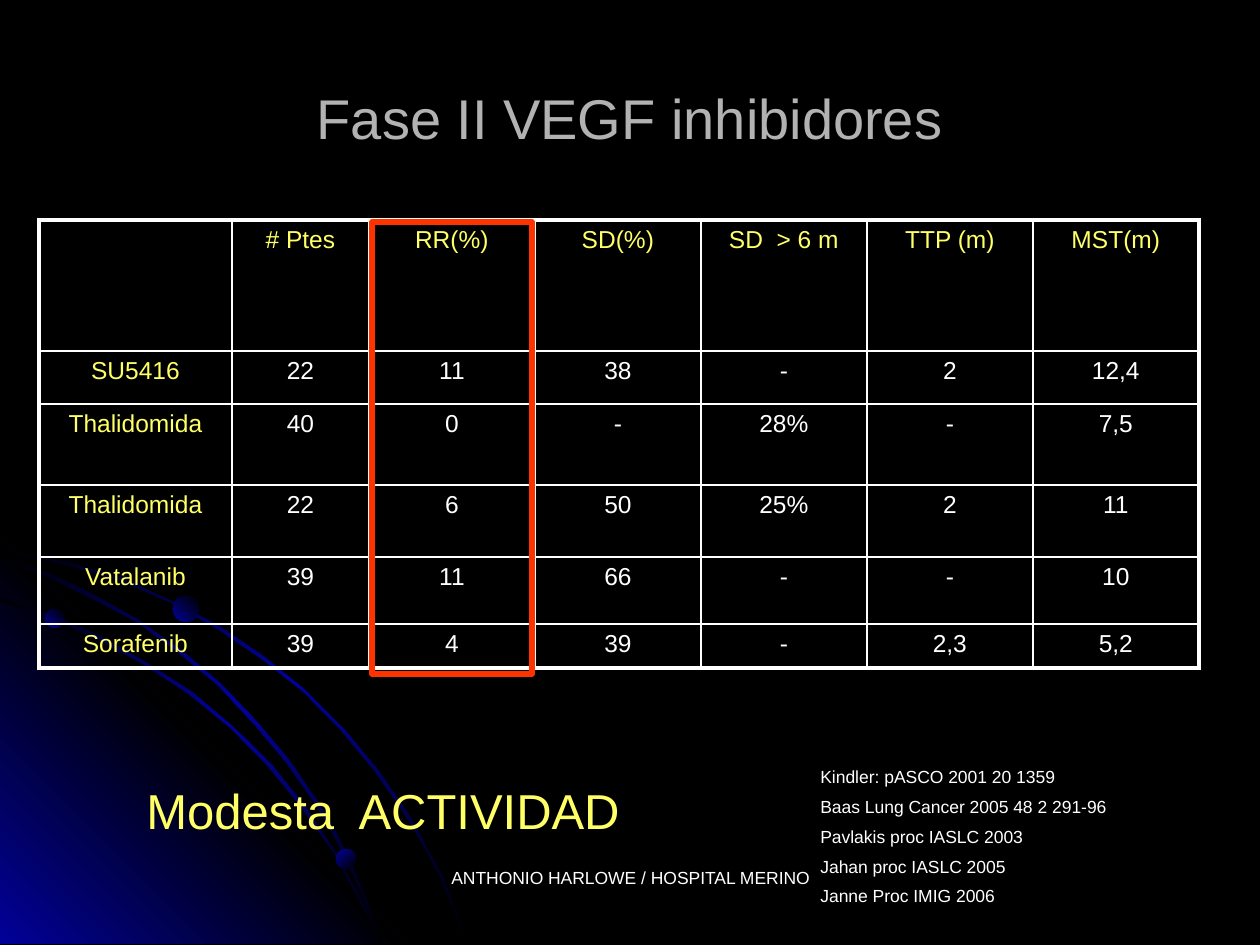
from lxml.etree import SubElement
from pptx import Presentation
from pptx.dml.color import RGBColor
from pptx.enum.shapes import MSO_SHAPE
from pptx.enum.text import MSO_ANCHOR, PP_ALIGN
from pptx.oxml.ns import qn
from pptx.util import Pt

SCALE = 914400 / 126
COLORS = {
    "black": "000000",
    "blue": "010199",
    "grey": "B2B2B2",
    "yellow": "FFFF66",
    "white": "FFFFFF",
    "red": "FF3300",
}
FONT = "Arial"
GLOW = ["blue", "black", "blue"]
STREAK = ["black", "blue", "black"]
CORNER = [(406, 944), (0, 944), (0, 538)]
OUTER_ARC = [
    (72, 563), (35, 556), (0, 548), (0, 552), (35, 558), (71, 566),
    (122, 581), (170, 602), (218, 629), (262, 659), (304, 692), (341, 730),
    (375, 771), (407, 818), (425, 848), (441, 879), (454, 911), (466, 944),
    (469, 944), (456, 911), (444, 879), (427, 848), (410, 816), (378, 770),
    (343, 728), (305, 690), (263, 656), (219, 626), (171, 601), (123, 578),
]
INNER_ARC = [
    (359, 900), (370, 922), (379, 944), (382, 944), (373, 920), (360, 897),
    (335, 852), (305, 806), (271, 764), (232, 726), (192, 692), (147, 663),
    (100, 636), (52, 615), (0, 598), (0, 601), (49, 617), (97, 639),
    (145, 665), (189, 694), (231, 728), (268, 766), (302, 808), (334, 853),
]
MIDDLE_ARC = [
    (0, 557), (0, 559), (45, 576), (93, 599), (137, 622), (179, 653),
    (218, 685), (255, 725), (286, 762), (318, 808), (336, 840), (353, 874),
    (368, 910), (379, 944), (382, 944), (370, 907), (355, 873), (339, 838),
    (320, 805), (289, 760), (257, 722), (221, 684), (181, 650), (140, 621),
    (96, 596), (49, 573),
]
OUTLINES = [
    (OUTER_ARC, STREAK, 45),
    (CORNER, GLOW, 315),
    (INNER_ARC, STREAK, 45),
    (MIDDLE_ARC, STREAK, 45),
]
ORBS = [(45, 609, 19, 315), (336, 849, 20, 45), (173, 596, 26, 315)]
COLUMNS = [193, 137] + [166] * 5
ROWS = [131, 53, 81, 72, 67, 44]
RESULTS = [
    ["", "# Ptes", "RR(%)", "SD(%)", "SD  > 6 m", "TTP (m)", "MST(m)"],
    ["SU5416", "22", "11", "38", "-", "2", "12,4"],
    ["Thalidomida", "40", "0", "-", "28%", "-", "7,5"],
    ["Thalidomida", "22", "6", "50", "25%", "2", "11"],
    ["Vatalanib", "39", "11", "66", "-", "-", "10"],
    ["Sorafenib", "39", "4", "39", "-", "2,3", "5,2"],
]
REFERENCES = [
    "Kindler: pASCO 2001 20 1359",
    "Baas Lung Cancer 2005 48 2 291-96",
    "Pavlakis proc IASLC 2003",
    "Jahan proc IASLC 2005",
    "Janne Proc IMIG 2006",
]


def px(length):
    return round(length * SCALE)


def rgb(name):
    return RGBColor.from_string(COLORS[name])


def style_para(para, size, color, align):
    para.font.name = FONT
    para.font.size = Pt(size)
    para.font.color.rgb = rgb(color)
    para.alignment = align


def paint_gradient(shape, names, angle):
    shape.shadow.inherit = False
    shape.line.fill.background()
    shape.fill.gradient()
    gradient = shape.element.spPr.find(qn("a:gradFill"))
    for child in list(gradient):
        gradient.remove(child)
    stops = SubElement(gradient, qn("a:gsLst"))
    for index, name in enumerate(names):
        position = 100000 * index // (len(names) - 1)
        stop = SubElement(stops, qn("a:gs"), pos=str(position))
        SubElement(stop, qn("a:srgbClr"), val=COLORS[name])
    SubElement(gradient, qn("a:lin"), ang=str(angle * 60000), scaled="0")


def add_backdrop(page, left, top):
    page.background.fill.solid()
    page.background.fill.fore_color.rgb = rgb("black")
    for points, names, angle in OUTLINES:
        builder = page.shapes.build_freeform(*points[0], scale=SCALE)
        builder.add_line_segments(points[1:], close=True)
        outline = builder.convert_to_shape(px(left), px(top))
        paint_gradient(outline, names, angle)
    for x, y, size, angle in ORBS:
        orb = page.shapes.add_shape(
            MSO_SHAPE.OVAL, px(left + x), px(top + y), px(size), px(size))
        paint_gradient(orb, ["blue", "black"], angle)


def add_text(page, left, top, width, height, lines, size, color,
             align=PP_ALIGN.CENTER, anchor=MSO_ANCHOR.TOP):
    box = page.shapes.add_textbox(px(left), px(top), px(width), px(height))
    frame = box.text_frame
    frame.word_wrap = True
    frame.vertical_anchor = anchor
    frame.text = "\n".join(lines)
    for index, para in enumerate(frame.paragraphs):
        style_para(para, size, color, align)
        if index:
            para.space_before = Pt(size / 2)


def set_borders(cell, outer_edges):
    properties = cell._tc.get_or_add_tcPr()
    for side in "LRTB":
        width = Pt(2.25 if side in outer_edges else 1)
        line = SubElement(properties, qn(f"a:ln{side}"), w=str(width))
        fill = SubElement(line, qn("a:solidFill"))
        SubElement(fill, qn("a:srgbClr"), val=COLORS["white"])


def add_results(page, left, top):
    table = page.shapes.add_table(
        len(ROWS), len(COLUMNS), px(left), px(top),
        px(sum(COLUMNS)), px(sum(ROWS))).table
    table.first_row = False
    table.horz_banding = False
    for column, width in zip(table.columns, COLUMNS):
        column.width = px(width)
    for row_index, (row, height) in enumerate(zip(table.rows, ROWS)):
        row.height = px(height)
        for column_index, cell in enumerate(row.cells):
            edges = {
                "L": column_index == 0,
                "R": column_index == len(COLUMNS) - 1,
                "T": row_index == 0,
                "B": row_index == len(ROWS) - 1,
            }
            set_borders(cell, [side for side in edges if edges[side]])
            cell.fill.background()
            cell.text = RESULTS[row_index][column_index]
            heading = edges["L"] or edges["T"]
            style_para(cell.text_frame.paragraphs[0], 14,
                       "yellow" if heading else "white", PP_ALIGN.CENTER)


def add_highlight(page, left, top, width, height):
    frame = page.shapes.add_shape(
        MSO_SHAPE.RECTANGLE, px(left), px(top), px(width), px(height))
    frame.shadow.inherit = False
    frame.fill.background()
    frame.line.color.rgb = rgb("red")
    frame.line.width = Pt(3)


def main():
    deck = Presentation()
    deck.slide_width, deck.slide_height = px(1260), px(945)
    page = deck.slides.add_slide(deck.slide_layouts[6])
    add_backdrop(page, 0, 0)
    add_text(page, 63, 38, 1134, 158, ["Fase II VEGF inhibidores"], 32, "grey",
             anchor=MSO_ANCHOR.MIDDLE)
    add_results(page, 39, 220)
    add_highlight(page, 372, 222, 160, 452)
    add_text(page, 808, 760, 380, 160, REFERENCES, 10, "white",
             align=PP_ALIGN.LEFT)
    add_text(page, 76, 774, 614, 160, ["Modesta  ACTIVIDAD"], 28, "yellow")
    add_text(page, 431, 861, 399, 63,
             ["ANTHONIO HARLOWE / HOSPITAL MERINO"], 10, "white")
    deck.save("out.pptx")


if __name__ == "__main__":
    main()
